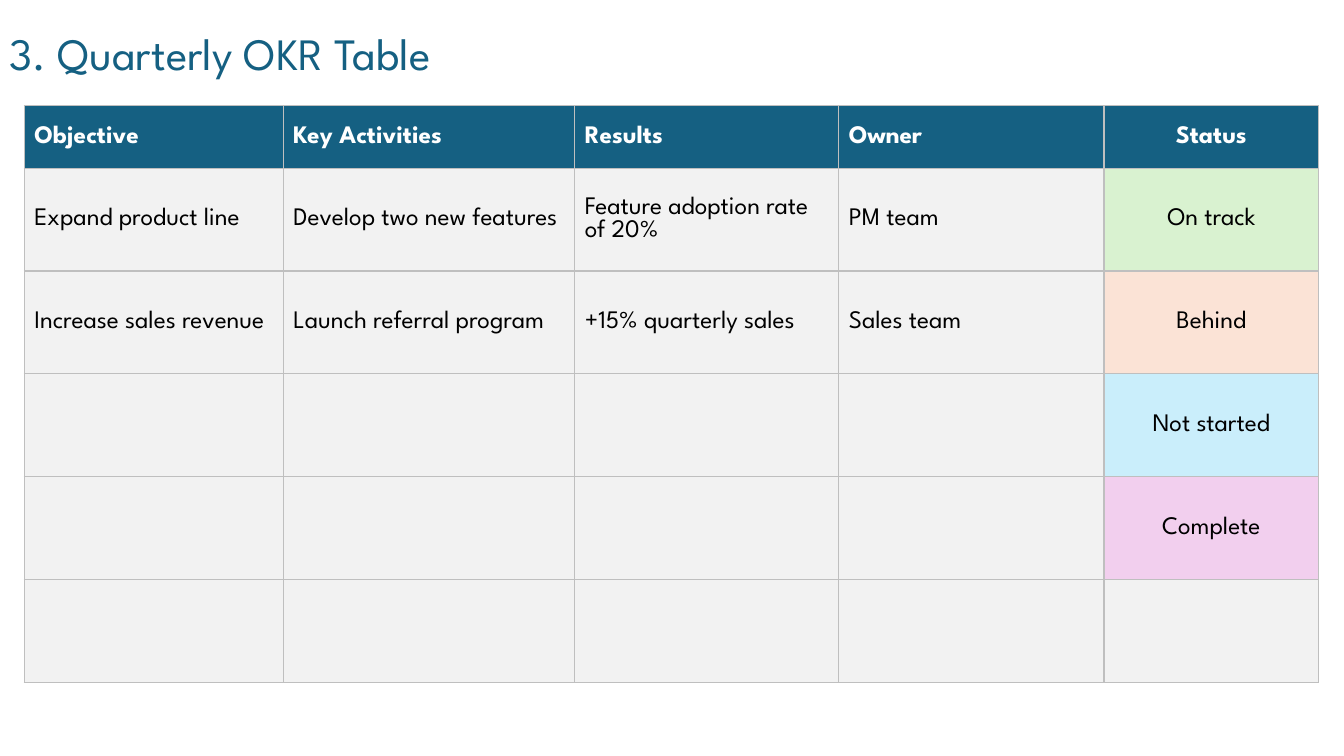
from lxml import etree
from pptx import Presentation
from pptx import util as u
from pptx.dml.color import RGBColor
from pptx.enum import text
from pptx.oxml import ns

PX = 9144  # EMU per px, 100 px to the inch
FONT = "League Spartan"

BLUE = RGBColor(0x15, 0x60, 0x82)
WHITE = RGBColor(0xFF, 0xFF, 0xFF)
BLACK = RGBColor(0x00, 0x00, 0x00)
PALE_GRAY = RGBColor(0xF2, 0xF2, 0xF2)
BORDER_GRAY = RGBColor(0xBF, 0xBF, 0xBF)
STATUS_FILLS = {
    "On track": RGBColor(0xD9, 0xF2, 0xD0),
    "Behind": RGBColor(0xFB, 0xE3, 0xD6),
    "Not started": RGBColor(0xCA, 0xEE, 0xFB),
    "Complete": RGBColor(0xF2, 0xCF, 0xEE),
}

COLUMN_WIDTHS = [257, 289, 262, 263, 213]
HEADER_HEIGHT, ROW_HEIGHT = 62, 102
HEADERS = ["Objective", "Key Activities", "Results", "Owner", "Status"]
OKR_ROWS = [
    ["Expand product line", "Develop two new features",
     "Feature adoption rate of 20%", "PM team", "On track"],
    ["Increase sales revenue", "Launch referral program",
     "+15% quarterly sales", "Sales team", "Behind"],
    ["", "", "", "", "Not started"],
    ["", "", "", "", "Complete"],
    ["", "", "", "", ""],
]


def px(length):
    return u.Emu(length * PX)


def write_text(frame, content, size=18, color=BLACK, bold=False,
               align=text.PP_ALIGN.LEFT):
    paragraph = frame.paragraphs[0]
    paragraph.alignment = align
    run = paragraph.add_run()
    run.text = content
    run.font.name = FONT
    run.font.size = u.Pt(size)
    run.font.bold = bold
    run.font.color.rgb = color


def add_title(slide, content, left, top, width, height):
    shape = slide.shapes.add_textbox(px(left), px(top), px(width), px(height))
    frame = shape.text_frame
    frame.word_wrap = True
    frame.auto_size = text.MSO_AUTO_SIZE.SHAPE_TO_FIT_TEXT
    write_text(frame, content, size=32, color=BLUE)


def add_borders(cell, color, width):
    properties = cell._tc.get_or_add_tcPr()
    for side in ("a:lnL", "a:lnR", "a:lnT", "a:lnB"):
        line = etree.SubElement(properties, ns.qn(side), w=str(u.Pt(width)))
        fill = etree.SubElement(line, ns.qn("a:solidFill"))
        etree.SubElement(fill, ns.qn("a:srgbClr"), val=str(color))


def format_cell(cell, content, fill, **text_format):
    add_borders(cell, BORDER_GRAY, 1)
    cell.fill.solid()
    cell.fill.fore_color.rgb = fill
    cell.vertical_anchor = text.MSO_ANCHOR.MIDDLE
    if content:
        write_text(cell.text_frame, content, **text_format)


def add_okr_table(slide, left, top):
    rows = [HEADERS] + OKR_ROWS
    heights = [HEADER_HEIGHT] + [ROW_HEIGHT] * len(OKR_ROWS)
    table = slide.shapes.add_table(
        len(rows), len(HEADERS), px(left), px(top),
        px(sum(COLUMN_WIDTHS)), px(sum(heights))).table
    for column, width in zip(table.columns, COLUMN_WIDTHS):
        column.width = px(width)
    for row, height in zip(table.rows, heights):
        row.height = px(height)

    # Header row is blue; status cells take the colour of their status
    for row_index, contents in enumerate(rows):
        is_header = row_index == 0
        for column_index, content in enumerate(contents):
            is_status = HEADERS[column_index] == "Status"
            fill = BLUE if is_header else STATUS_FILLS.get(content, PALE_GRAY)
            format_cell(
                table.cell(row_index, column_index), content, fill,
                color=WHITE if is_header else BLACK, bold=is_header,
                align=text.PP_ALIGN.CENTER if is_status else text.PP_ALIGN.LEFT)


def main():
    presentation = Presentation()
    presentation.slide_width, presentation.slide_height = px(1333), px(750)
    slide = presentation.slides.add_slide(presentation.slide_layouts[6])

    # Title
    add_title(slide, "3. Quarterly OKR Table", 0, 21, 760, 64)

    # Objectives and their status
    add_okr_table(slide, 24, 105)

    presentation.save("out.pptx")


if __name__ == "__main__":
    main()
